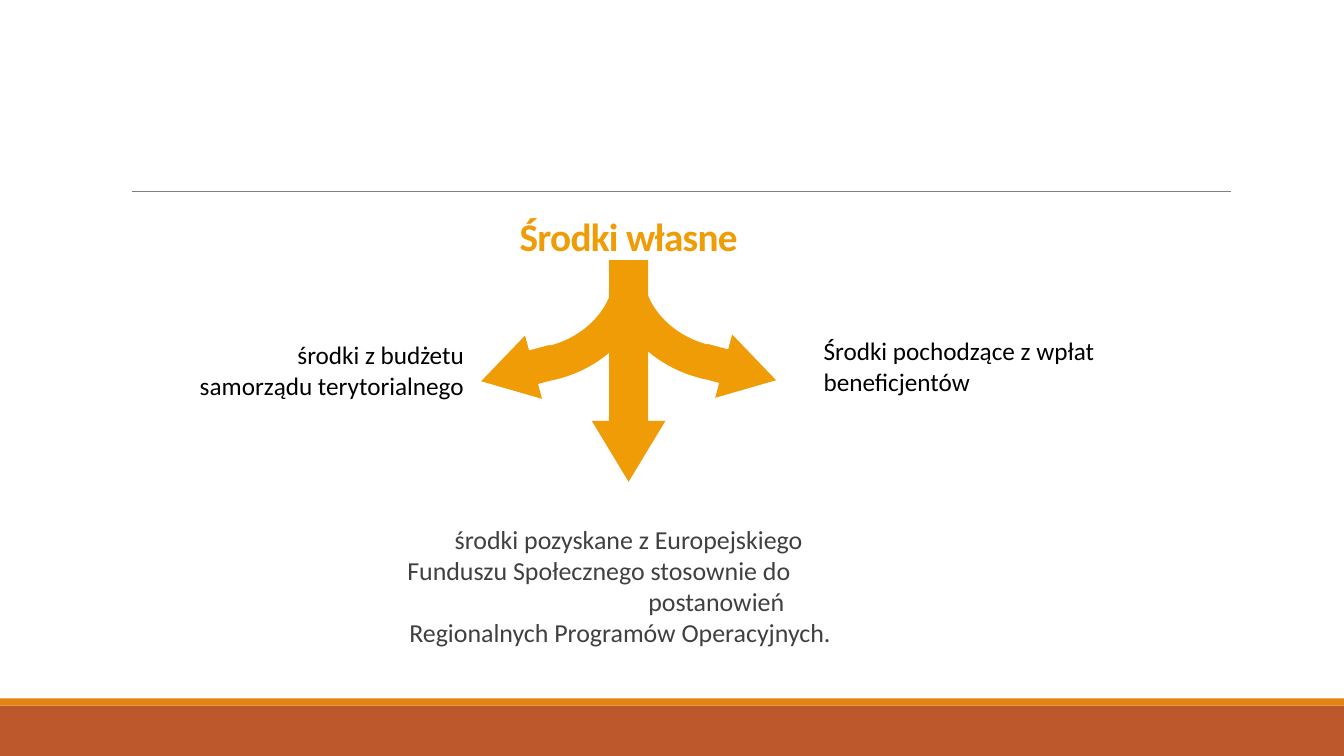
from pptx import Presentation
from pptx.dml.color import RGBColor
from pptx.enum.shapes import MSO_CONNECTOR, MSO_SHAPE
from pptx.enum.text import MSO_ANCHOR, PP_ALIGN
from pptx.oxml.ns import qn
from pptx.util import Inches, Pt
from lxml import etree

LEFT, CENTER, RIGHT = PP_ALIGN.LEFT, PP_ALIGN.CENTER, PP_ALIGN.RIGHT
TOP, BOTTOM = MSO_ANCHOR.TOP, MSO_ANCHOR.BOTTOM
RECTANGLE, ARC, ARROW = MSO_SHAPE.RECTANGLE, MSO_SHAPE.BLOCK_ARC, MSO_SHAPE.DOWN_ARROW
STRAIGHT = MSO_CONNECTOR.STRAIGHT

FONT = "Calibri"
AMBER, ORANGE, RUST = "F09C06", "E48312", "BD582C"
BLACK, DARK, GRAY = "000000", "404040", "808080"

TITLE = "Środki własne"
BUDGET = "środki z budżetu samorządu terytorialnego"
PAYMENTS = "Środki pochodzące z wpłat beneficjentów"
FUND_LINES = [
    ("środki pozyskane z Europejskiego", 0.47),
    ("Funduszu Społecznego stosownie do", 0),
    ("postanowień", 2.39),
    ("Regionalnych Programów Operacyjnych.", 0.02),
]

BANDS = [((0, 7, 13.33, 0.5), RUST), ((0, 6.93, 13.33, 0.07), ORANGE)]
ARC_ADJUST = (159.502, 201.765, 0.166)
ARROW_ADJUST = (0.529, 0.827)
ARROWS = [
    (ARC, (6.03, 1.73, 2.32, 2.05), 195, False, ARC_ADJUST),
    (ARROW, (7.01, 3.3, 0.65, 0.75), 285, False, ARROW_ADJUST),
    (ARC, (4.13, 1.74, 2.31, 2.05), 165, True, ARC_ADJUST),
    (ARROW, (4.81, 3.31, 0.65, 0.75), 75, True, ARROW_ADJUST),
    (ARROW, (5.87, 2.58, 0.73, 2.2), 0, False, ARROW_ADJUST),
]


def color(value):
    return RGBColor.from_string(value)


def add_figure(page, kind, frame, fill, rotation=0, mirrored=False, adjust=()):
    shape = page.shapes.add_shape(kind, *map(Inches, frame))
    shape.shadow.inherit = False
    shape.fill.solid()
    shape.fill.fore_color.rgb = color(fill)
    shape.line.fill.background()
    shape.rotation = rotation
    for index, value in enumerate(adjust):
        shape.adjustments[index] = value
    if mirrored:
        shape._element.spPr.get_or_add_xfrm().set("flipH", "1")


def add_text(page, lines, frame, size=18, fill=BLACK, bold=False, align=LEFT,
             anchor=TOP, side=0.1, spacing=None, tracking=None):
    box = page.shapes.add_textbox(*map(Inches, frame)).text_frame
    box.word_wrap = True
    box.vertical_anchor = anchor
    box.margin_left = box.margin_right = Inches(side)
    for index, (text, indent) in enumerate(lines):
        para = box.paragraphs[0] if index == 0 else box.add_paragraph()
        para.alignment = align
        if spacing:
            para.line_spacing = spacing
        if indent:
            para._p.get_or_add_pPr().set("marL", str(Inches(indent)))
        span = para.add_run()
        span.text = text
        span.font.name = FONT
        span.font.size = Pt(size)
        span.font.bold = bold
        span.font.color.rgb = color(fill)
        if tracking:
            span._r.get_or_add_rPr().set("spc", str(int(tracking * 100)))


def add_rule(page, left, right, top):
    rule = page.shapes.add_connector(
        STRAIGHT, Inches(left), Inches(top), Inches(right), Inches(top))
    rule.line.color.rgb = color(GRAY)
    rule.line.width = Pt(0.5)
    etree.SubElement(rule._element.spPr, qn("a:effectLst"))


def main():
    deck = Presentation()
    deck.slide_width, deck.slide_height = Inches(13.33), Inches(7.5)
    page = deck.slides.add_slide(deck.slide_layouts[6])
    for frame, fill in BANDS:
        add_figure(page, RECTANGLE, frame, fill)
    add_rule(page, 1.31, 12.21, 1.9)
    add_text(page, [(TITLE, 0)], (1.17, 1.65, 10.13, 0.97), size=28, fill=AMBER,
             bold=True, align=CENTER, anchor=BOTTOM, spacing=0.85, tracking=-0.5)
    add_text(page, FUND_LINES, (4.04, 5.14, 4.4, 1.41), size=18.5, fill=DARK, side=0)
    for kind, frame, rotation, mirrored, adjust in ARROWS:
        add_figure(page, kind, frame, AMBER, rotation, mirrored, adjust)
    add_text(page, [(BUDGET, 0)], (1.7, 3.32, 3, 0.71), align=RIGHT)
    add_text(page, [(PAYMENTS, 0)], (8.07, 3.28, 2.89, 0.71))
    deck.save("out.pptx")


if __name__ == "__main__":
    main()
